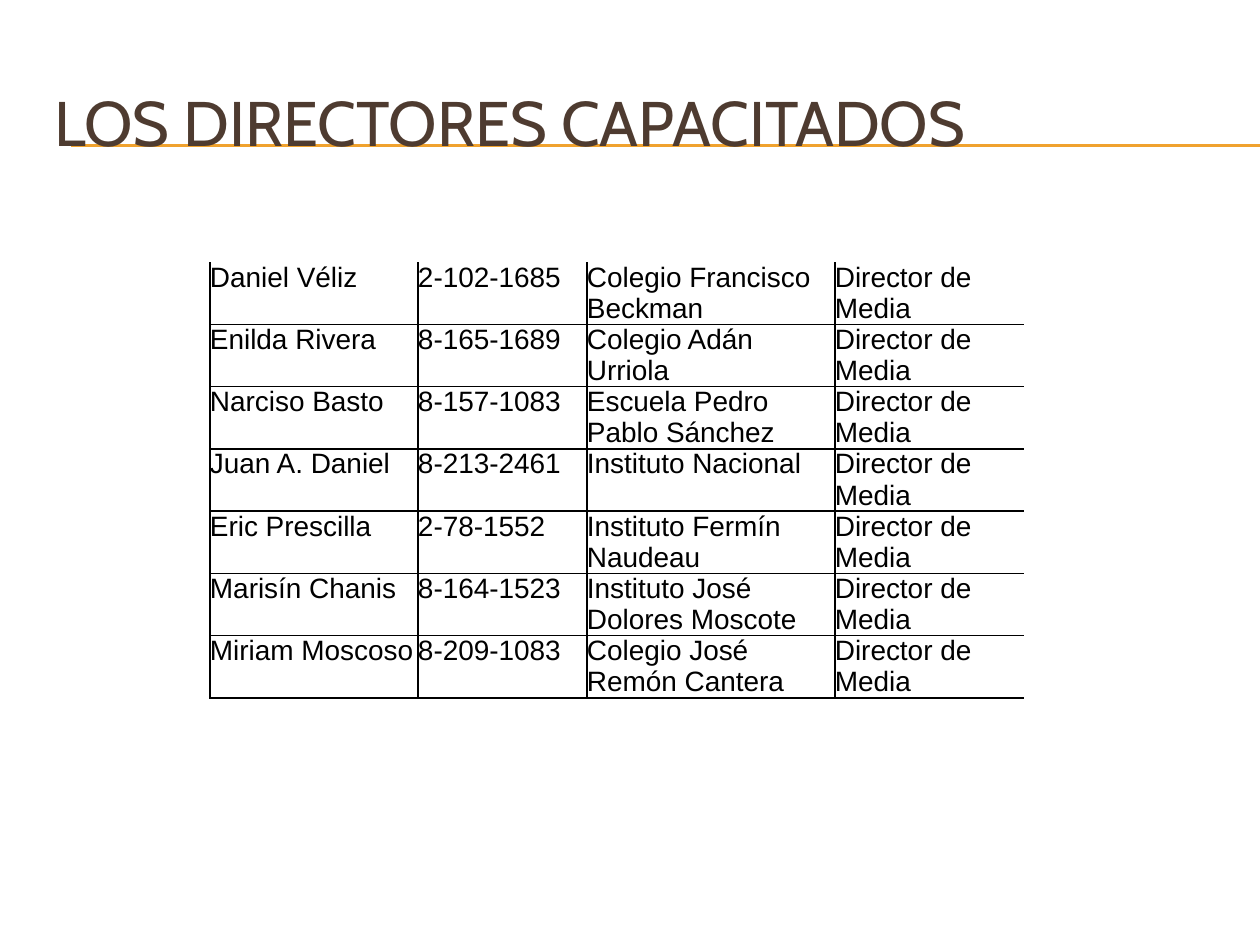
from lxml.etree import SubElement
from pptx import Presentation
from pptx.dml.color import RGBColor
from pptx.enum.shapes import MSO_CONNECTOR
from pptx.enum.text import MSO_ANCHOR, PP_ALIGN
from pptx.oxml.ns import qn
from pptx.util import Emu, Pt

COLORS = {"title": "4E3B30", "rule": "F0A22E", "text": "000000", "border": "000000"}
COLUMN_WIDTHS = [208, 169, 248, 189]
ROW_HEIGHT = 62
DIRECTORS = [
    ("Daniel Véliz", "2-102-1685", "Colegio Francisco Beckman"),
    ("Enilda Rivera", "8-165-1689", "Colegio Adán Urriola"),
    ("Narciso Basto", "8-157-1083", "Escuela Pedro Pablo Sánchez"),
    ("Juan A. Daniel", "8-213-2461", "Instituto Nacional"),
    ("Eric Prescilla", "2-78-1552", "Instituto Fermín Naudeau"),
    ("Marisín Chanis", "8-164-1523", "Instituto José Dolores Moscote"),
    ("Miriam Moscoso", "8-209-1083", "Colegio José Remón Cantera"),
]
POSITION = "Director de Media"


def px(n):
    """Turn pixels into EMU."""
    return Emu(round(n * 914400 / 126))


def set_font(p, name, size, color):
    """Format a whole paragraph."""
    p.font.name = name
    p.font.size = Pt(size)
    p.font.color.rgb = RGBColor.from_string(COLORS[color])


def add_rule(s, y):
    """Draw a thin line from the left margin to the right edge."""
    line = s.shapes.add_connector(MSO_CONNECTOR.STRAIGHT, px(71), px(y), px(1260), px(y))
    line.line.color.rgb = RGBColor.from_string(COLORS["rule"])
    line.line.width = Pt(0.75)
    SubElement(line.element.spPr, qn("a:effectLst"))


def set_title(s, text):
    """Place and format the title in front of the rules."""
    title = s.shapes.title
    title.left, title.top, title.width, title.height = px(42), px(63), px(1197), px(116)
    tf = title.text_frame
    tf.text = text
    tf.word_wrap = True
    tf.vertical_anchor = MSO_ANCHOR.MIDDLE
    p = tf.paragraphs[0]
    p.alignment = PP_ALIGN.LEFT
    set_font(p, "Cabin", 36, "title")
    title.element.getparent().append(title.element)


def set_borders(cell, sides):
    """Draw solid borders on the given sides and none on the others."""
    tc_pr = cell._tc.get_or_add_tcPr()
    for side in "LRTB":
        ln = SubElement(tc_pr, qn(f"a:ln{side}"), w=str(Pt(1)))
        if side in sides:
            fill = SubElement(ln, qn("a:solidFill"))
            SubElement(fill, qn("a:srgbClr"), val=COLORS["border"])
        else:
            SubElement(ln, qn("a:noFill"))


def fill_cell(cell, text, sides):
    """Write one table cell without margins or fill."""
    cell.text = text
    cell.margin_left = cell.margin_right = cell.margin_top = cell.margin_bottom = 0
    set_font(cell.text_frame.paragraphs[0], "Arial", 16, "text")
    set_borders(cell, sides)
    cell.fill.background()


def add_directors(s):
    """Build the table, open at the top and at the right."""
    n_rows, n_cols = len(DIRECTORS), len(COLUMN_WIDTHS)
    frame = s.shapes.add_table(n_rows, n_cols, px(210), px(262),
                               px(sum(COLUMN_WIDTHS)), px(n_rows * ROW_HEIGHT))
    table = frame.table
    table.first_row = table.horz_banding = False
    for column, width in zip(table.columns, COLUMN_WIDTHS):
        column.width = px(width)
    for i, director in enumerate(DIRECTORS):
        table.rows[i].height = px(ROW_HEIGHT)
        for j, text in enumerate((*director, POSITION)):
            sides = "LB" + ("T" if i else "") + ("R" if j < n_cols - 1 else "")
            fill_cell(table.cell(i, j), text, sides)


def main():
    """Build and save the slide."""
    prs = Presentation()
    prs.slide_width, prs.slide_height = px(1260), px(945)
    s = prs.slides.add_slide(prs.slide_layouts[5])
    for y in (145, 146):
        add_rule(s, y)
    set_title(s, "LOS DIRECTORES CAPACITADOS")
    add_directors(s)
    prs.save("out.pptx")


if __name__ == "__main__":
    main()
